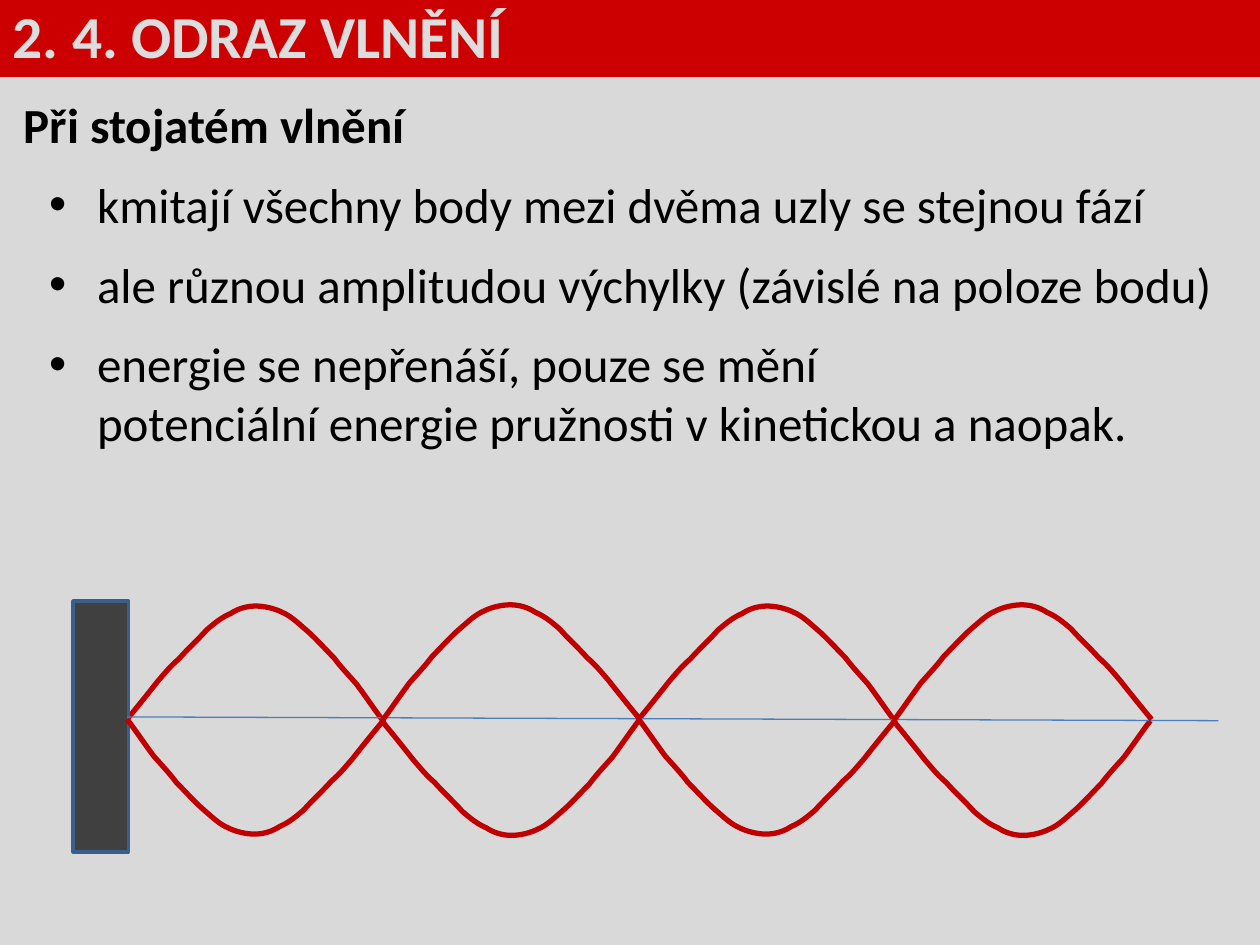
from pptx import Presentation
from pptx.dml.color import RGBColor
from pptx.enum import shapes, text
from pptx.oxml.ns import qn
from pptx.util import Inches, Pt
from lxml import etree

# Content
TITLE = "2. 4. ODRAZ VLNĚNÍ"
LEAD = "Při stojatém vlnění"
POINTS = [
    ["kmitají všechny body mezi dvěma uzly se stejnou fází"],
    ["ale různou amplitudou výchylky (závislé na poloze bodu)"],
    ["energie se nepřenáší, pouze se mění",
     "potenciální energie pružnosti v kinetickou a naopak."],
]

THEME = {
    "font": "Calibri", "title_size": 34, "body_size": 28,
    "background": "D9D9D9", "banner": "CC0000", "title": "DDDDDD",
    "body": "000000", "wave": "C00000", "wall": "404040",
    "wall_line": "3A5F8C", "axis": "4B7EBC",
}

# One half-wave as (distance from node, displacement): a start, then Bézier triples
ARCH = [
    (0, 0),
    (.04, .05), (.15, .21), (.21, .29),
    (.28, .37), (.33, .42), (.39, .5),
    (.46, .57), (.54, .66), (.61, .72),
    (.68, .78), (.73, .83), (.8, .86),
    (.86, .89), (.94, .91), (1.01, .91),
    (1.08, .91), (1.15, .89), (1.21, .85),
    (1.28, .82), (1.33, .78), (1.4, .72),
    (1.47, .64), (1.55, .57), (1.62, .49),
    (1.69, .43), (1.72, .39), (1.79, .31),
    (1.86, .22), (1.99, .06), (2.04, 0),
]
ARCH_COUNT, ARCH_PITCH = 4, 2.03
FIRST_NODE, LAST_NODE = 1.01, 9.13


def color(name):
    return RGBColor.from_string(THEME[name])


def place(sp, left, top, width, height):
    sp.left, sp.top = Inches(left), Inches(top)
    sp.width, sp.height = Inches(width), Inches(height)


def add_run(p, words, size, tint, bold):
    r = p.add_run()
    r.text = words
    r.font.name, r.font.size, r.font.bold = THEME["font"], Pt(THEME[size]), bold
    r.font.color.rgb = color(tint)


def prepare_frame(sp):
    tf = sp.text_frame
    tf.word_wrap = True
    tf.auto_size = text.MSO_AUTO_SIZE.NONE
    tf.vertical_anchor = text.MSO_ANCHOR.TOP
    return tf


def set_bullet(p, margin=0, indent=0, char=None):
    pPr = p._p.get_or_add_pPr()
    pPr.set("marL", str(Inches(margin)))
    pPr.set("indent", str(Inches(indent)))
    if char:
        etree.SubElement(pPr, qn("a:buChar")).set("char", char)
    else:
        etree.SubElement(pPr, qn("a:buNone"))


def curve_segments(sp):
    """Turn every three line segments of a freeform into one Bézier curve."""
    lines = list(sp._element.iter(qn("a:lnTo")))
    for i in range(0, len(lines), 3):
        curve = etree.Element(qn("a:cubicBezTo"))
        lines[i].addprevious(curve)
        for line in lines[i:i + 3]:
            curve.append(line[0])
            line.getparent().remove(line)


def add_wave(slide, start, direction, base):
    """Draw a wave from a node, going right (1) or left (-1), first arch down."""
    group = slide.shapes.add_group_shape()
    for k in range(ARCH_COUNT):
        node = start + direction * k * ARCH_PITCH
        side = 1 if k % 2 == 0 else -1
        pts = [(Inches(node + direction * x), Inches(base + side * y))
               for x, y in ARCH]
        builder = group.shapes.build_freeform(*pts[0])
        builder.add_line_segments(pts[1:], close=False)
        sp = builder.convert_to_shape()
        curve_segments(sp)
        sp.shadow.inherit = False
        sp.fill.background()
        sp.line.color.rgb, sp.line.width = color("wave"), Pt(3)


def main():
    prs = Presentation()
    prs.slide_width, prs.slide_height = Inches(10), Inches(7.5)
    slide = prs.slides.add_slide(prs.slide_layouts[1])
    slide.background.fill.solid()
    slide.background.fill.fore_color.rgb = color("background")

    # Title banner
    title = slide.shapes.title
    place(title, 0, -.06, 10, .67)
    title.fill.solid()
    title.fill.fore_color.rgb = color("banner")
    p = prepare_frame(title).paragraphs[0]
    p.alignment = text.PP_ALIGN.LEFT
    add_run(p, TITLE, "title_size", "title", True)

    # Lead line and bullets
    body = slide.placeholders[1]
    place(body, .09, .7, 10.16, 3.43)
    tf = prepare_frame(body)
    p = tf.paragraphs[0]
    p.space_before = Pt(12)
    set_bullet(p)
    add_run(p, LEAD, "body_size", "body", True)
    for lines in POINTS:
        p = tf.add_paragraph()
        p.space_before = Pt(12)
        set_bullet(p, .58, -.38, "•")
        for i, line in enumerate(lines):
            if i:
                p.add_line_break()
            add_run(p, line, "body_size", "body", False)

    # Standing wave: reflected wave, wall, axis, incoming wave
    add_wave(slide, LAST_NODE, -1, 5.72)

    wall = slide.shapes.add_shape(shapes.MSO_SHAPE.RECTANGLE, Inches(.58),
                                  Inches(4.77), Inches(.44), Inches(1.99))
    wall.shadow.inherit = False
    wall.fill.solid()
    wall.fill.fore_color.rgb = color("wall")
    wall.line.color.rgb, wall.line.width = color("wall_line"), Pt(2)

    axis = slide.shapes.add_connector(shapes.MSO_CONNECTOR.STRAIGHT, Inches(1.01),
                                      Inches(5.69), Inches(9.67), Inches(5.72))
    axis.line.color.rgb, axis.line.width = color("axis"), Pt(.75)
    etree.SubElement(axis._element.spPr, qn("a:effectLst"))

    add_wave(slide, FIRST_NODE, 1, 5.71)

    prs.save("out.pptx")


if __name__ == "__main__":
    main()
